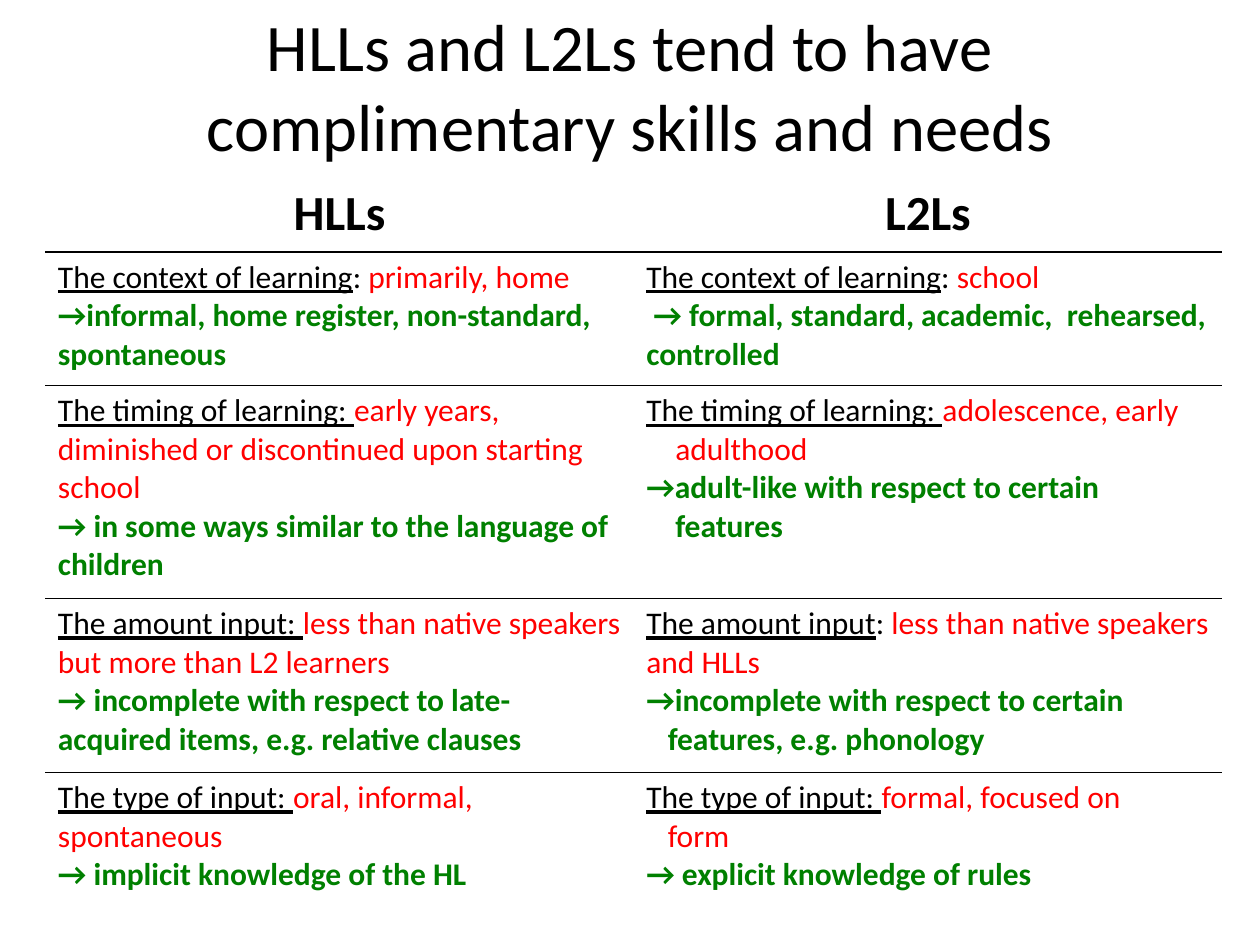
from lxml.etree import SubElement
from pptx import Presentation
from pptx.dml.color import RGBColor
from pptx.enum.text import MSO_ANCHOR, PP_ALIGN
from pptx.oxml.ns import qn
from pptx.util import Inches, Pt

WIDTH, HEIGHT = 10, 7.5
BLACK, WHITE, RED, GREEN = "000000", "FFFFFF", "FF0000", "008000"

# Run styles: colour, bold, underline
STYLES = {
    "head": (BLACK, True, False),
    "topic": (BLACK, False, True),
    "plain": (BLACK, False, False),
    "fact": (RED, False, False),
    "result": (GREEN, True, False),
}


def color(value):
    return RGBColor.from_string(value)


class SlideBuilder:
    font_name = "Calibri"

    def __init__(self, presentation):
        self.slide = presentation.slides.add_slide(presentation.slide_layouts[6])

    def box(self, left, top, width, height):
        """Turn shares of the slide's size into lengths."""
        return (Inches(left * WIDTH), Inches(top * HEIGHT),
                Inches(width * WIDTH), Inches(height * HEIGHT))

    def set_font(self, paragraph, size, align):
        paragraph.alignment = align
        paragraph.font.name = self.font_name
        paragraph.font.size = Pt(size)

    def title(self, text, *shares):
        frame = self.slide.shapes.add_textbox(*self.box(*shares)).text_frame
        frame.word_wrap = True
        frame.vertical_anchor = MSO_ANCHOR.MIDDLE
        paragraph = frame.paragraphs[0]
        paragraph.text = text
        self.set_font(paragraph, 38, PP_ALIGN.CENTER)
        paragraph.font.color.rgb = color(BLACK)

    def table(self, rows, row_heights, *shares):
        table = self.slide.shapes.add_table(
            len(rows), len(rows[0]), *self.box(*shares)).table
        table.first_row = table.horz_banding = False
        last = len(rows) - 1
        for index, (row, height) in enumerate(zip(rows, row_heights)):
            table.rows[index].height = Inches(height)
            for column, lines in enumerate(row):
                cell = table.cell(index, column)
                self.fill_cell(cell, lines, is_header=index == 0)
                self.borders(cell, top=index > 0, bottom=index < last)

    def fill_cell(self, cell, lines, is_header):
        cell.vertical_anchor = MSO_ANCHOR.MIDDLE if is_header else MSO_ANCHOR.TOP
        size, align = (28, PP_ALIGN.CENTER) if is_header else (18, PP_ALIGN.LEFT)
        frame = cell.text_frame
        for number, (indent, *runs) in enumerate(lines):
            paragraph = frame.add_paragraph() if number else frame.paragraphs[0]
            self.set_font(paragraph, size, align)
            if indent:
                properties = paragraph._p.get_or_add_pPr()
                properties.set("marL", str(Inches(indent)))
                properties.set("indent", "0")
            for style, text in runs:
                run = paragraph.add_run()
                run.text = text
                rgb, run.font.bold, run.font.underline = STYLES[style]
                run.font.color.rgb = color(rgb)

    def borders(self, cell, **visible):
        """Rule the cell above and below only, then fill it."""
        properties = cell._tc.get_or_add_tcPr()
        for tag, side in (("a:lnL", "left"), ("a:lnR", "right"),
                          ("a:lnT", "top"), ("a:lnB", "bottom")):
            line = SubElement(properties, qn(tag), w=str(Pt(1)))
            if visible.get(side):
                fill = SubElement(line, qn("a:solidFill"))
                SubElement(fill, qn("a:srgbClr"), val=BLACK)
            else:
                SubElement(line, qn("a:noFill"))
        cell.fill.solid()
        cell.fill.fore_color.rgb = color(WHITE)


# Each cell is a list of lines: left indent in inches, then (style, text) runs
ROWS = [
    [[(0, ("head", "HLLs"))], [(0, ("head", "L2Ls"))]],
    [
        [(0, ("topic", "The context of learning"), ("plain", ": "),
          ("fact", "primarily, home")),
         (0, ("result", "→informal, home register, non-standard, spontaneous"))],
        [(0, ("topic", "The context of learning"), ("plain", ": "),
          ("fact", "school")),
         (0, ("plain", " "),
          ("result", "→ formal, standard, academic,  rehearsed, controlled"))],
    ],
    [
        [(0, ("topic", "The timing of learning: "),
          ("fact", "early years, diminished or discontinued upon starting school")),
         (0, ("result", "→ in some ways similar to the language of children"))],
        [(0, ("topic", "The timing of learning: "), ("fact", "adolescence, early")),
         (0.23, ("fact", "adulthood")),
         (0, ("result", "→adult-like with respect to certain")),
         (0.23, ("result", "features"))],
    ],
    [
        [(0, ("topic", "The amount input: "),
          ("fact", "less than native speakers but more than L2 learners")),
         (0, ("result", "→ incomplete with respect to late-acquired items, "
                        "e.g. relative clauses"))],
        [(0, ("topic", "The amount input"), ("plain", ": "),
          ("fact", "less than native speakers and HLLs")),
         (0, ("result", "→incomplete with respect to certain")),
         (0.17, ("result", "features, e.g. phonology"))],
    ],
    [
        [(0, ("topic", "The type of input: "),
          ("fact", "oral, informal, spontaneous")),
         (0, ("result", "→ implicit knowledge of the HL"))],
        [(0, ("topic", "The type of input: "), ("fact", "formal, focused on")),
         (0.17, ("fact", "form")),
         (0, ("result", "→ explicit knowledge of rules"))],
    ],
]
ROW_HEIGHTS = [0.6, 1.06, 1.69, 1.38, 1.17]


def main():
    presentation = Presentation()
    presentation.slide_width = Inches(WIDTH)
    presentation.slide_height = Inches(HEIGHT)
    builder = SlideBuilder(presentation)

    # Heading
    builder.title("HLLs and L2Ls tend to have complimentary skills and needs",
                  0.05, 0.11 / HEIGHT, 0.9, 0.15)
    # Comparison of the two groups of learners
    builder.table(ROWS, ROW_HEIGHTS, 0.036, 1.4 / HEIGHT,
                  0.934, sum(ROW_HEIGHTS) / HEIGHT)

    presentation.save("out.pptx")


if __name__ == "__main__":
    main()
